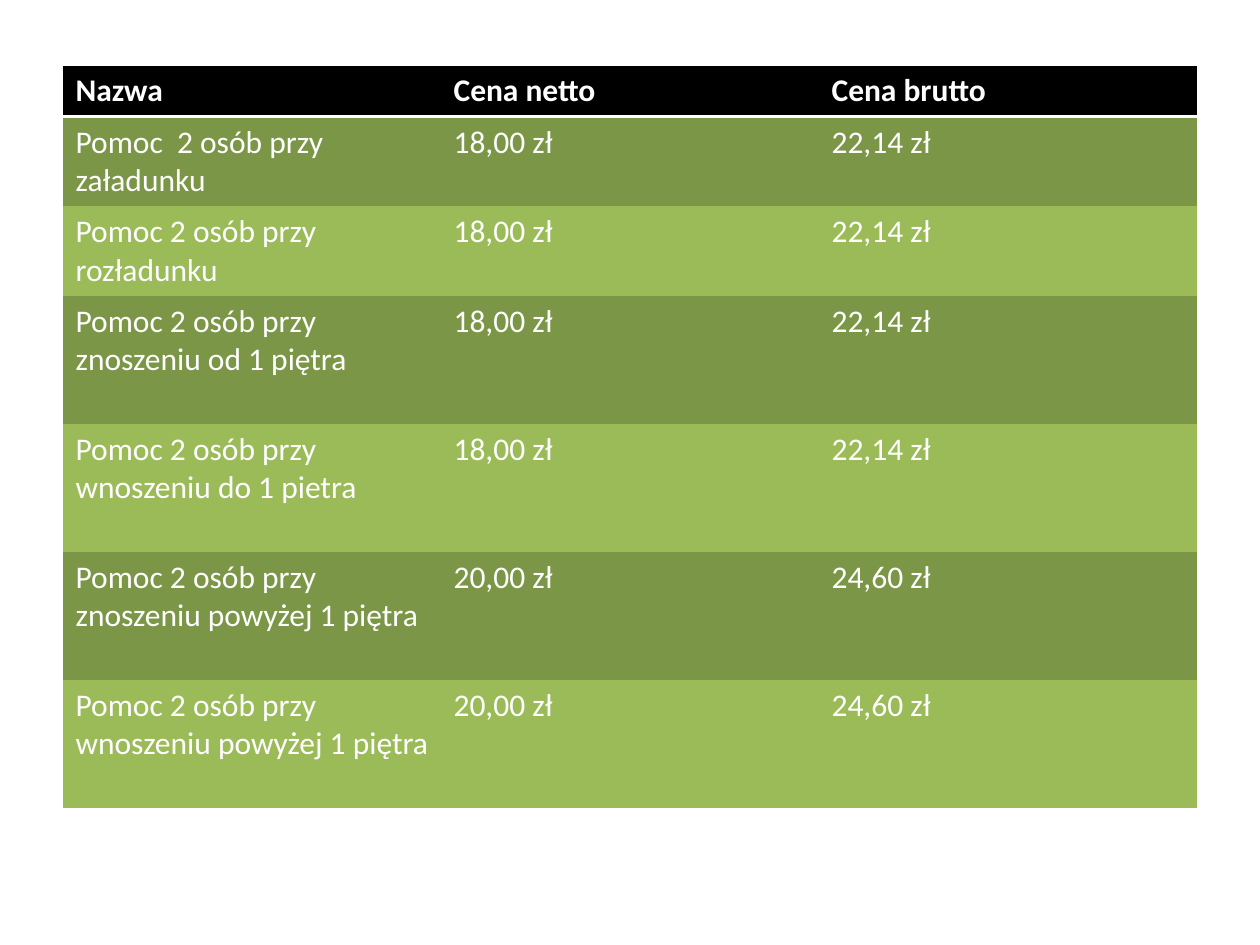
from dataclasses import dataclass

from lxml import etree
from pptx import Presentation
from pptx.dml.color import RGBColor
from pptx.oxml.ns import qn
from pptx.util import Pt

NO_STYLE_NO_GRID = "{2D5ABB26-0587-4C30-8999-92F81FD0307C}"


@dataclass(frozen=True)
class Theme:
    font: str = "Calibri"
    text_size: int = 18
    text: str = "FFFFFF"
    header: str = "000000"
    bands: tuple = ("7C9647", "9BBB59")
    rule: str = "FFFFFF"
    rule_width: int = 2


class SlideBuilder:
    def __init__(self, slide, theme):
        self.slide = slide
        self.theme = theme

    def table(self, left, top, width, rows, heights):
        column_count = len(rows[0])
        shape = self.slide.shapes.add_table(
            len(rows), column_count, Pt(left), Pt(top), Pt(width), Pt(sum(heights))
        )
        table = shape.table
        table._tbl.tblPr.find(qn("a:tableStyleId")).text = NO_STYLE_NO_GRID
        for column in table.columns:
            column.width = Pt(width / column_count)
        for row_index, (values, height) in enumerate(zip(rows, heights)):
            table.rows[row_index].height = Pt(height)
            is_header = row_index == 0
            bands = self.theme.bands
            fill = self.theme.header if is_header else bands[(row_index - 1) % len(bands)]
            for column_index, value in enumerate(values):
                cell = table.cell(row_index, column_index)
                self.cell(cell, value, fill, is_header)
                if is_header:
                    self.bottom_rule(cell)

    def cell(self, cell, value, fill, bold):
        cell.fill.solid()
        cell.fill.fore_color.rgb = RGBColor.from_string(fill)
        cell.text_frame.text = value
        font = cell.text_frame.paragraphs[0].runs[0].font
        font.name = self.theme.font
        font.size = Pt(self.theme.text_size)
        font.bold = bold
        font.color.rgb = RGBColor.from_string(self.theme.text)

    def bottom_rule(self, cell):
        line = etree.Element(qn("a:lnB"), w=str(Pt(self.theme.rule_width)))
        fill = etree.SubElement(line, qn("a:solidFill"))
        etree.SubElement(fill, qn("a:srgbClr"), val=self.theme.rule)
        cell._tc.get_or_add_tcPr().insert(0, line)


def main():
    """Build the price list slide for two-person moving help."""
    presentation = Presentation()
    presentation.slide_width = Pt(720)
    presentation.slide_height = Pt(540)
    slide = presentation.slides.add_slide(presentation.slide_layouts[6])
    prices = [
        ("Nazwa", "Cena netto", "Cena brutto"),
        ("Pomoc  2 osób przy załadunku", "18,00 zł", "22,14 zł"),
        ("Pomoc 2 osób przy rozładunku", "18,00 zł", "22,14 zł"),
        ("Pomoc 2 osób przy znoszeniu od 1 piętra", "18,00 zł", "22,14 zł"),
        ("Pomoc 2 osób przy wnoszeniu do 1 pietra", "18,00 zł", "22,14 zł"),
        ("Pomoc 2 osób przy znoszeniu powyżej 1 piętra", "20,00 zł", "24,60 zł"),
        ("Pomoc 2 osób przy wnoszeniu powyżej 1 piętra", "20,00 zł", "24,60 zł"),
    ]
    heights = [29.2] + [51.2] * 2 + [73.15] * 4
    SlideBuilder(slide, Theme()).table(36, 37.5, 648, prices, heights)
    presentation.save("out.pptx")


if __name__ == "__main__":
    main()
